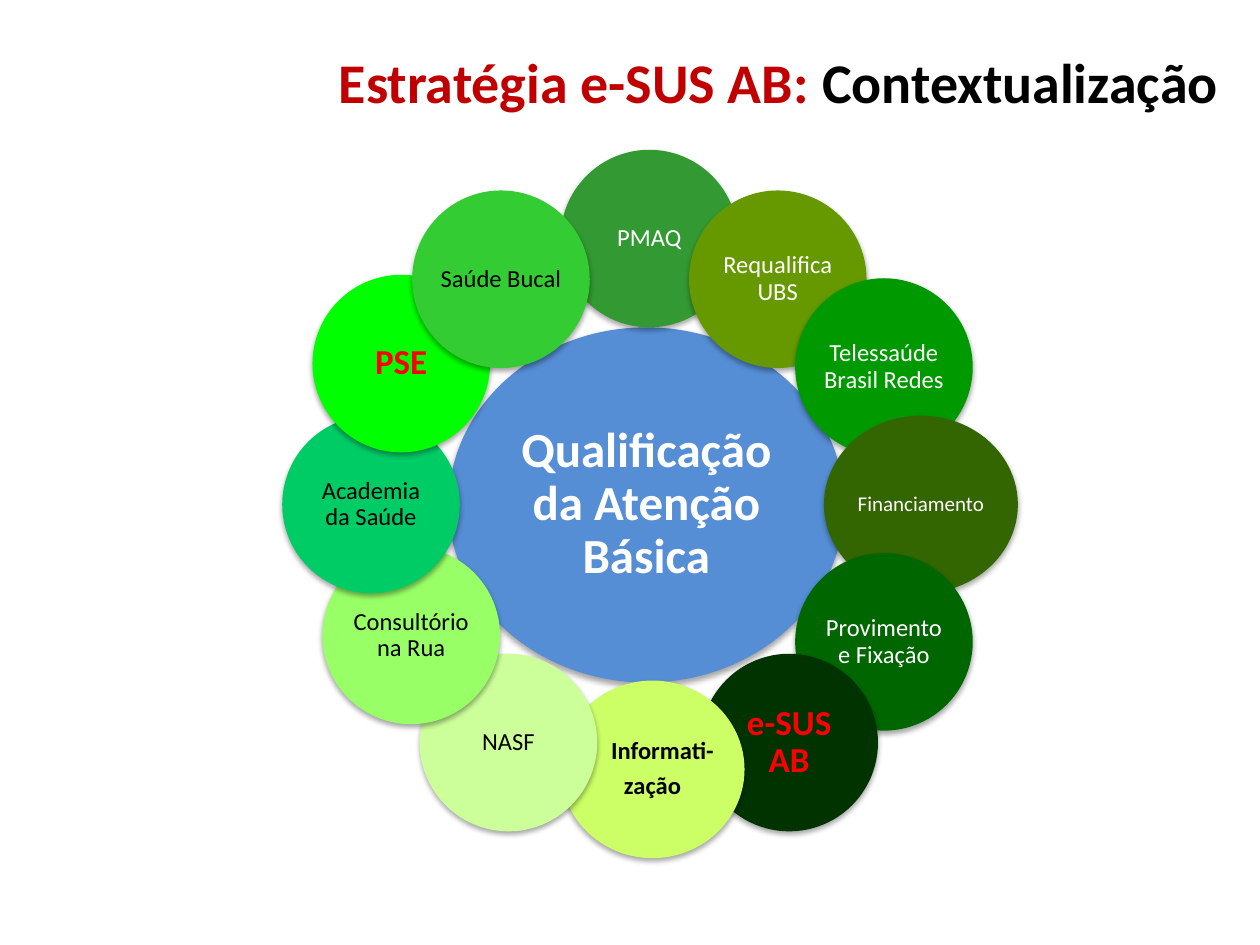
from lxml import etree
from pptx import Presentation
from pptx.dml.color import RGBColor
from pptx.enum.shapes import MSO_SHAPE
from pptx.enum.text import MSO_ANCHOR, PP_ALIGN
from pptx.oxml import parse_xml
from pptx.util import Cm, Pt

ELLIPSE = MSO_SHAPE.OVAL
MIDDLE = MSO_ANCHOR.MIDDLE
CENTER = PP_ALIGN.CENTER

DRAWING_NS = "http://schemas.openxmlformats.org/drawingml/2006/main"
SHADOW = (
    f'<a:outerShdw xmlns:a="{DRAWING_NS}" blurRad="40000" dist="23000" '
    'dir="5400000" rotWithShape="0"><a:srgbClr val="000000">'
    '<a:alpha val="35000"/></a:srgbClr></a:outerShdw>'
)

WHITE, BLACK, RED = "FFFFFF", "000000", "FF0000"
DIAMETER = 3.58

# Left, top, fill, text, text colour; drawn from back to front
CIRCLES = [
    (11.30, 3.02, "339933", "PMAQ", WHITE),
    (13.89, 3.84, "669900", "Requalifica UBS", WHITE),
    (16.03, 5.61, "009900", "Telessaúde Brasil Redes", WHITE),
    (16.61, 8.38, "336600", "Financiamento", WHITE),
    (16.03, 11.15, "006600", "Provimento e Fixação", WHITE),
    (14.12, 13.18, "003300", "e-SUS AB", RED),
    (11.30, 13.72, "CCFF66", "Informati-\nzação", BLACK),
    (8.46, 13.18, "CCFF99", "NASF", BLACK),
    (6.50, 11.02, "99FF66", "Consultório na Rua", BLACK),
    (5.69, 8.38, "00CC66", "Academia da Saúde", BLACK),
    (6.30, 5.54, "00FF00", "PSE", RED),
    (8.31, 3.84, "33CC33", "Saúde Bucal", BLACK),
]

# Circles that differ from the usual width, size, weight or margins
HIGHLIGHT = {"size": 20, "bold": True, "inset": 0.07}
VARIANTS = {
    "Financiamento": {"width": 3.91, "size": 12},
    "e-SUS AB": HIGHLIGHT,
    "PSE": HIGHLIGHT,
    "Informati-\nzação": {"width": 3.71, "bold": True, "inset": 0, "indent": 0.4},
}


def color(value):
    return RGBColor.from_string(value)


class SlideBuilder:
    def __init__(self, slide, font="Calibri"):
        self.slide = slide
        self.font = font

    def add_run(self, paragraph, text, size, text_color, bold):
        run = paragraph.add_run()
        run.text = text
        run.font.name = self.font
        run.font.size = Pt(size)
        run.font.bold = bold
        run.font.color.rgb = color(text_color)

    def title(self, left, top, width, height, parts):
        shape = self.slide.shapes.add_textbox(Cm(left), Cm(top), Cm(width), Cm(height))
        frame = shape.text_frame
        frame.word_wrap = True
        frame.vertical_anchor = MIDDLE
        paragraph = frame.paragraphs[0]
        paragraph.alignment = CENTER
        for text, text_color in parts:
            self.add_run(paragraph, text, 32, text_color, True)

    def ellipse(self, left, top, fill, text, text_color, width=DIAMETER,
                height=DIAMETER, size=14, bold=False, inset=0.05, indent=0):
        shape = self.slide.shapes.add_shape(
            ELLIPSE, Cm(left), Cm(top), Cm(width), Cm(height))
        shape.fill.solid()
        shape.fill.fore_color.rgb = color(fill)
        shape.line.fill.background()
        self.add_shadow(shape)

        frame = shape.text_frame
        frame.word_wrap = True
        frame.vertical_anchor = MIDDLE
        frame.margin_left = frame.margin_right = Cm(inset)
        frame.margin_top = frame.margin_bottom = Cm(inset)
        for index, line in enumerate(text.split("\n")):
            paragraph = frame.add_paragraph() if index else frame.paragraphs[0]
            paragraph.alignment = CENTER
            paragraph.line_spacing = 0.9
            paragraph.space_after = Pt(round(size * 0.35, 1))
            if indent and index == 0:
                paragraph._p.get_or_add_pPr().set("marL", str(Cm(indent)))
            self.add_run(paragraph, line, size, text_color, bold)

    def add_shadow(self, shape):
        shape.shadow.inherit = False
        effects = shape._element.spPr.find(etree.QName(DRAWING_NS, "effectLst").text)
        effects.append(parse_xml(SHADOW))


def main():
    presentation = Presentation()
    presentation.slide_width = Cm(25.4)
    presentation.slide_height = Cm(19.05)
    slide = presentation.slides.add_slide(presentation.slide_layouts[6])
    builder = SlideBuilder(slide)

    # Title
    builder.title(6.5, 0.76, 18.39, 1.75, [
        ("Estratégia e-SUS AB: ", "C00000"),
        ("Contextualização", BLACK),
    ])

    # Central theme
    builder.ellipse(9.04, 6.6, "558ED5", "Qualificação da Atenção Básica", WHITE,
                    width=7.98, height=7.16, size=28, bold=True, inset=0.1)

    # Ring of programmes
    for left, top, fill, text, text_color in CIRCLES:
        builder.ellipse(left, top, fill, text, text_color, **VARIANTS.get(text, {}))

    presentation.save("out.pptx")


if __name__ == "__main__":
    main()
